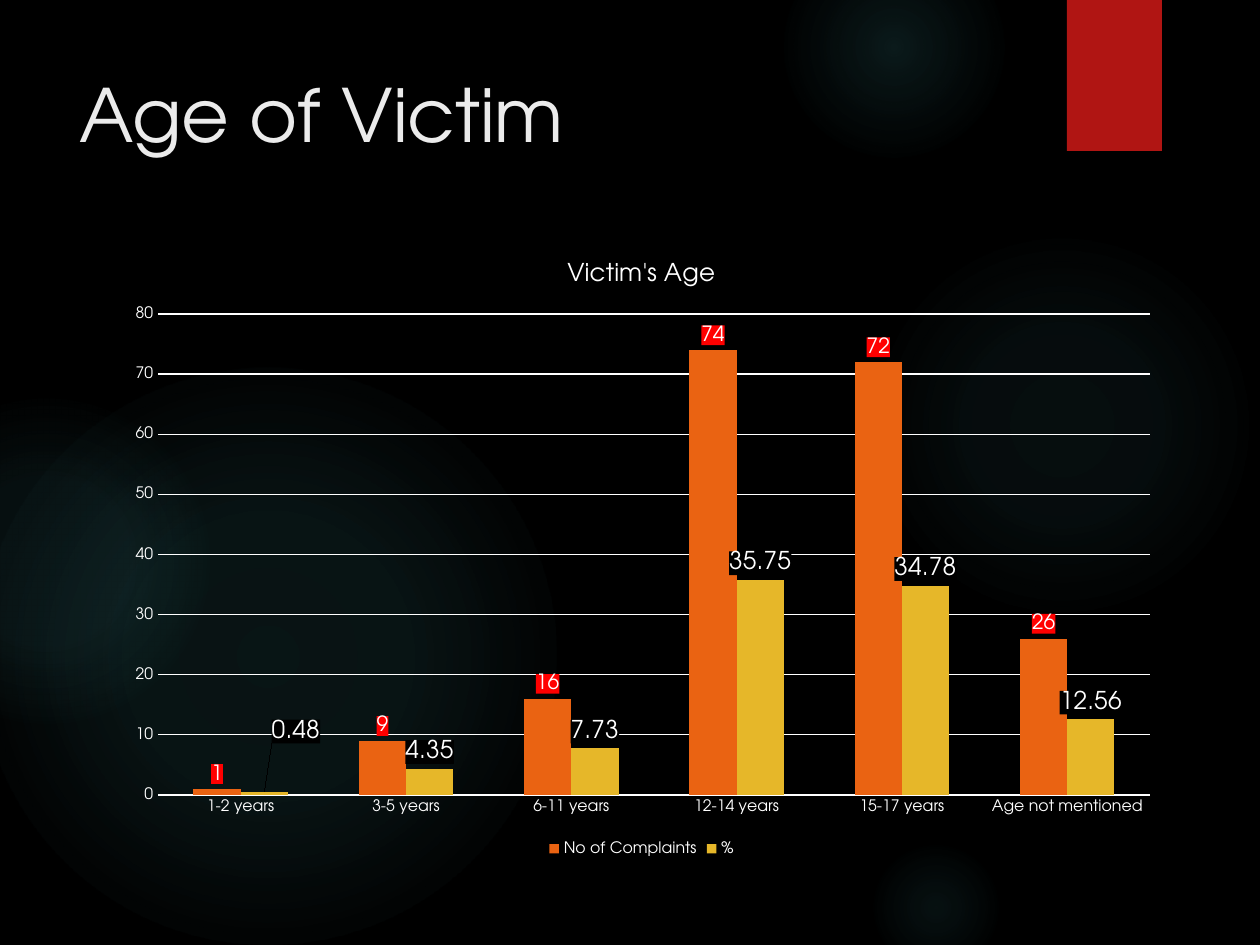
from lxml import etree
from pptx import Presentation
from pptx.chart.data import CategoryChartData
from pptx.dml.color import RGBColor
from pptx.enum import chart, shapes, text
from pptx.oxml import ns, parse_xml
from pptx.util import Pt

PX = 914400 / 126
FONT = "TeX Gyre Adventor"
WHITE, BLACK, GLOW = "FFFFFF", "000000", "50B9C1"
NS = ns.nsdecls("a", "c")

# left, top, diameter, then (stop, alpha) pairs in percent
GLOWS = [
    (868, 231, 388, [(0, 7), (36, 6), (69, 0)]),
    (784, -63, 220, [(0, 14), (36, 7), (73, 0)]),
    (868, 840, 136, [(0, 9), (36, 5), (66, 0)]),
    (-21, 368, 577, [(0, 11), (36, 10), (75, 0)]),
    (-116, 399, 325, [(0, 8), (36, 8), (72, 0)]),
]
CATEGORIES = ["1-2 years", "3-5 years", "6-11 years", "12-14 years",
              "15-17 years", "Age not mentioned"]
# name, values, bar colour, label size, label background
SERIES = [
    ("No of Complaints", [1, 9, 16, 74, 72, 26], "EA6312", 12, "FF0000"),
    ("%", [0.48, 4.35, 7.73, 35.75, 34.78, 12.56], "E6B729", 14, BLACK),
]
CHART_BOX = (113, 237, 1057, 624)
PLOT_BOX = (158, 314, 992, 481)


def box(*lengths):
    return [round(n * PX) for n in lengths]


def rgb(value):
    return RGBColor.from_string(value)


def set_font(font, size, color=WHITE):
    font.name, font.size, font.bold = FONT, Pt(size), False
    font.color.rgb = rgb(color)


def add_plain_shape(s, kind, left, top, width, height, color):
    sp = s.shapes.add_shape(kind, *box(left, top, width, height))
    sp.shadow.inherit = False
    sp.fill.solid()
    sp.fill.fore_color.rgb = rgb(color)
    sp.line.fill.background()
    return sp


def add_glow(s, left, top, size, stops):
    """Add a circle whose colour fades out from its centre."""
    sp = add_plain_shape(s, shapes.MSO_SHAPE.OVAL, left, top, size, size, GLOW)
    marks = "".join(
        f'<a:gs pos="{pos * 1000}"><a:srgbClr val="{GLOW}">'
        f'<a:alpha val="{alpha * 1000}"/></a:srgbClr></a:gs>'
        for pos, alpha in stops)
    solid = sp.element.spPr.find(ns.qn("a:solidFill"))
    solid.getparent().replace(solid, parse_xml(
        f'<a:gradFill {NS}><a:gsLst>{marks}</a:gsLst><a:path path="circle">'
        '<a:fillToRect l="50000" t="50000" r="50000" b="50000"/>'
        '</a:path></a:gradFill>'))


def add_ribbon(s):
    sp = add_plain_shape(s, shapes.MSO_SHAPE.RECTANGLE, 1067, 0, 95, 151, "B01513")
    effects = sp.element.spPr.find(ns.qn("a:effectLst"))
    effects.append(parse_xml(
        f'<a:outerShdw {NS} blurRad="{Pt(3)}" dist="{Pt(2)}" dir="5400000">'
        f'<a:srgbClr val="{BLACK}"><a:alpha val="45000"/></a:srgbClr></a:outerShdw>'))


def set_title(s, words):
    sp = s.shapes.title
    s.shapes.element.append(sp.element)
    sp.left, sp.top, sp.width, sp.height = box(67, 63, 973, 193)
    tf = sp.text_frame
    tf.vertical_anchor = text.MSO_ANCHOR.TOP
    p = tf.paragraphs[0]
    p.alignment = text.PP_ALIGN.LEFT
    r = p.add_run()
    r.text = words
    set_font(r.font, 42, "EBEBEB")


def manual_layout(**values):
    parts = "".join(f'<c:{key} val="{value}"/>' for key, value in values.items())
    return parse_xml(f"<c:layout {NS}><c:manualLayout>{parts}</c:manualLayout></c:layout>")


def fill_label(label, color):
    """Give a c:dLbls or c:dLbl element a solid background."""
    label.find(ns.qn("c:txPr")).addprevious(parse_xml(
        f'<c:spPr {NS}><a:solidFill><a:srgbClr val="{color}"/></a:solidFill></c:spPr>'))


def format_series(series, color, size, background):
    series.format.fill.solid()
    series.format.fill.fore_color.rgb = rgb(color)
    labels = series.data_labels
    labels.show_value = True
    labels.position = chart.XL_LABEL_POSITION.OUTSIDE_END
    set_font(labels.font, size)
    fill_label(series.data_labels._element, background)


def shift_label(series, index, size, background, dx, dy):
    label = series.points[index].data_label
    set_font(label.font, size)
    label.position = chart.XL_LABEL_POSITION.OUTSIDE_END
    node = series.data_labels._element.find(ns.qn("c:dLbl"))
    fill_label(node, background)
    node.find(ns.qn("c:idx")).addnext(manual_layout(x=dx, y=dy))


def format_axis(axis):
    axis.major_tick_mark = axis.minor_tick_mark = chart.XL_TICK_MARK.NONE
    axis.format.line.fill.background()
    set_font(axis.tick_labels.font, 9)


def place_plot(ch):
    left, top, width, height = CHART_BOX
    x, y, w, h = PLOT_BOX
    area = ch._chartSpace.find(".//" + ns.qn("c:plotArea"))
    for old in area.findall(ns.qn("c:layout")):
        area.remove(old)
    area.insert(0, manual_layout(
        layoutTarget="inner", xMode="edge", yMode="edge",
        x=(x - left) / width, y=(y - top) / height, w=w / width, h=h / height))


def add_age_chart(s):
    data = CategoryChartData()
    data.categories = CATEGORIES
    for name, values, *_ in SERIES:
        data.add_series(name, values)
    ch = s.shapes.add_chart(chart.XL_CHART_TYPE.COLUMN_CLUSTERED,
                            *box(*CHART_BOX), data).chart
    set_font(ch.font, 10)

    ch.has_title = True
    tf = ch.chart_title.text_frame
    tf.text = "Victim's Age"
    set_font(tf.paragraphs[0].runs[0].font, 14)
    ch.chart_title.include_in_layout = False

    ch.has_legend = True
    ch.legend.position = chart.XL_LEGEND_POSITION.BOTTOM
    ch.legend.include_in_layout = False
    set_font(ch.legend.font, 9)

    format_axis(ch.category_axis)
    format_axis(ch.value_axis)
    ch.value_axis.minimum_scale, ch.value_axis.maximum_scale = 0, 80
    ch.value_axis.major_unit = 10
    grid = ch.value_axis.major_gridlines.format.line
    grid.color.rgb, grid.width = rgb(WHITE), Pt(0.75)

    plot = ch.plots[0]
    plot.gap_width, plot.overlap, plot.vary_by_categories = 150, 0, False
    for series, (_, _, color, size, background) in zip(plot.series, SERIES):
        format_series(series, color, size, background)
    shift_label(plot.series[1], 0, 14, BLACK, 0.03, -0.07)
    place_plot(ch)


def main():
    prs = Presentation()
    prs.slide_width, prs.slide_height = box(1260, 945)
    s = prs.slides.add_slide(prs.slide_layouts[5])
    s.background.fill.solid()
    s.background.fill.fore_color.rgb = rgb(BLACK)
    for glow in GLOWS:
        add_glow(s, *glow)
    add_ribbon(s)
    set_title(s, "Age of Victim")
    add_age_chart(s)
    prs.save("out.pptx")


if __name__ == "__main__":
    main()
